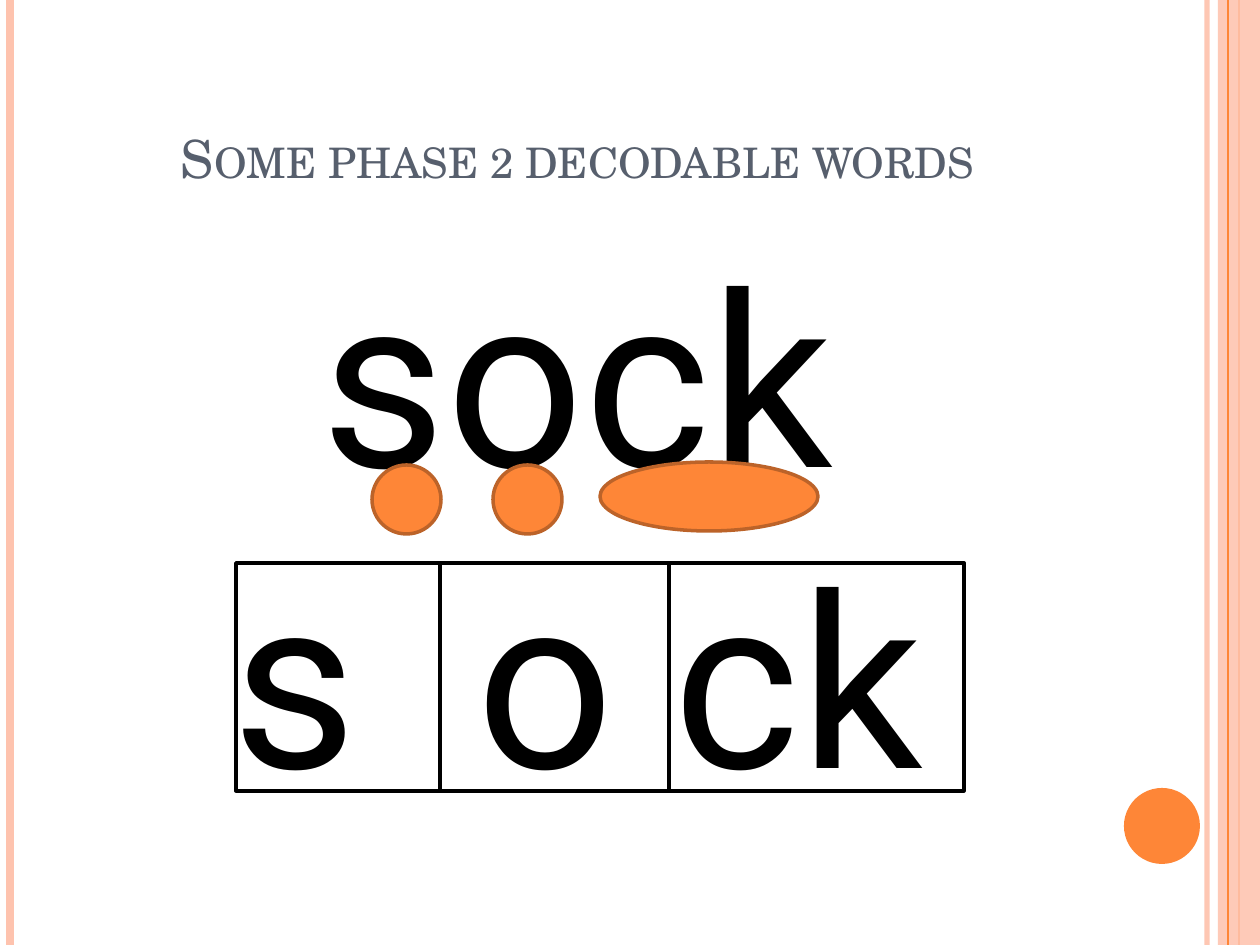
import pptx
import pptx.util
import pptx.dml.color
import pptx.enum.shapes
import pptx.enum.text
import pptx.oxml.ns
import lxml.etree

TITLE = "Some phase 2 decodable words"
WORD = "sock"
SOUNDS = [("s", 0), (" ", 34), ("o ck", 0)]

COLORS = {"orange": "FE8637", "peach": "FEC3AE", "rim": "BC6329",
          "slate": "575F6D", "black": "000000"}
WIDTH, HEIGHT = 1260, 945
SCALE = 914400 // 126

SIDE_RULES = [(1207, "peach", 3, 93), (10, "peach", 4.5, 100), (1239, "orange", 1.5, 100)]
BAND = (1218, 0, 42, HEIGHT)
BAND_RULE = (1228, "orange", 0.75, 100)
BADGE = (1124, 788, 76, 76)
SOUND_BUTTONS = [(372, 465, 69, 69), (493, 465, 69, 69), (600, 462, 218, 69)]
FRAME = (236, 563, 728, 228)
DIVIDERS = [440, 669]

SHAPES = pptx.enum.shapes.MSO_SHAPE


def px(value):
    return pptx.util.Emu(value * SCALE)


def rgb(name):
    return pptx.dml.color.RGBColor.from_string(COLORS[name])


def add_child(parent, tag, **attributes):
    return lxml.etree.SubElement(parent, pptx.oxml.ns.qn(tag), attributes)


def set_opacity(element, percent):
    if percent < 100:
        color = next(element.iter(pptx.oxml.ns.qn("a:srgbClr")))
        add_child(color, "a:alpha", val=str(percent * 1000))


def add_rule(page, x, color, width, opacity=100, top=0, bottom=HEIGHT):
    line = page.shapes.add_connector(
        pptx.enum.shapes.MSO_CONNECTOR.STRAIGHT, px(x), px(top), px(x), px(bottom))
    line.line.color.rgb = rgb(color)
    line.line.width = pptx.util.Pt(width)
    properties = line._element.spPr
    set_opacity(properties, opacity)
    add_child(properties, "a:effectLst")


def add_box(page, kind, place, fill=None, line=None, opacity=100):
    shape = page.shapes.add_shape(kind, *map(px, place))
    shape.shadow.inherit = False
    if fill:
        shape.fill.solid()
        shape.fill.fore_color.rgb = rgb(fill)
        set_opacity(shape._element.spPr, opacity)
    else:
        shape.fill.background()
    if line:
        shape.line.color.rgb = rgb(line)
        shape.line.width = pptx.util.Pt(2)
    else:
        shape.line.fill.background()


def place_text(box, place, anchor):
    box.left, box.top, box.width, box.height = map(px, place)
    frame = box.text_frame
    frame.word_wrap = True
    frame.auto_size = pptx.enum.text.MSO_AUTO_SIZE.NONE
    frame.vertical_anchor = anchor
    return frame


def style(para, font, size, color):
    para.alignment = pptx.enum.text.PP_ALIGN.CENTER
    for span in para.runs:
        span.font.name = font
        span.font.size = pptx.util.Pt(size)
        span.font.color.rgb = rgb(color)


def add_title(page):
    frame = place_text(page.shapes.title, (63, 38, 1029, 157),
                       pptx.enum.text.MSO_ANCHOR.BOTTOM)
    frame.text = TITLE
    para = frame.paragraphs[0]
    style(para, "TeX Gyre Schola", 30, "slate")
    para.runs[0].font._element.set("cap", "small")


def add_words(page):
    frame = place_text(page.placeholders[1], (63, 220, 1029, 672),
                       pptx.enum.text.MSO_ANCHOR.TOP)
    frame.text = WORD
    sounds = frame.add_paragraph()
    for text, spacing in SOUNDS:
        span = sounds.add_run()
        span.text = text
        span.font._element.set("spc", str(spacing * 100))
    for para in frame.paragraphs:
        style(para, "Roboto", 138, "black")
        para.space_before = pptx.util.Pt(6)
        properties = para._p.get_or_add_pPr()
        properties.set("marL", "0")
        properties.set("indent", "0")
        add_child(properties, "a:buNone")


def main():
    deck = pptx.Presentation()
    deck.slide_width, deck.slide_height = px(WIDTH), px(HEIGHT)
    page = deck.slides.add_slide(deck.slide_layouts[1])
    for rule in SIDE_RULES:
        add_rule(page, *rule)
    add_box(page, SHAPES.RECTANGLE, BAND, fill="peach", opacity=87)
    add_rule(page, *BAND_RULE)
    add_box(page, SHAPES.OVAL, BADGE, fill="orange")
    add_title(page)
    add_words(page)
    for button in SOUND_BUTTONS:
        add_box(page, SHAPES.OVAL, button, fill="orange", line="rim")
    add_box(page, SHAPES.RECTANGLE, FRAME, line="black")
    for x in DIVIDERS:
        add_rule(page, x, "black", 2.25, top=FRAME[1], bottom=FRAME[1] + FRAME[3])
    deck.save("out.pptx")


if __name__ == "__main__":
    main()
